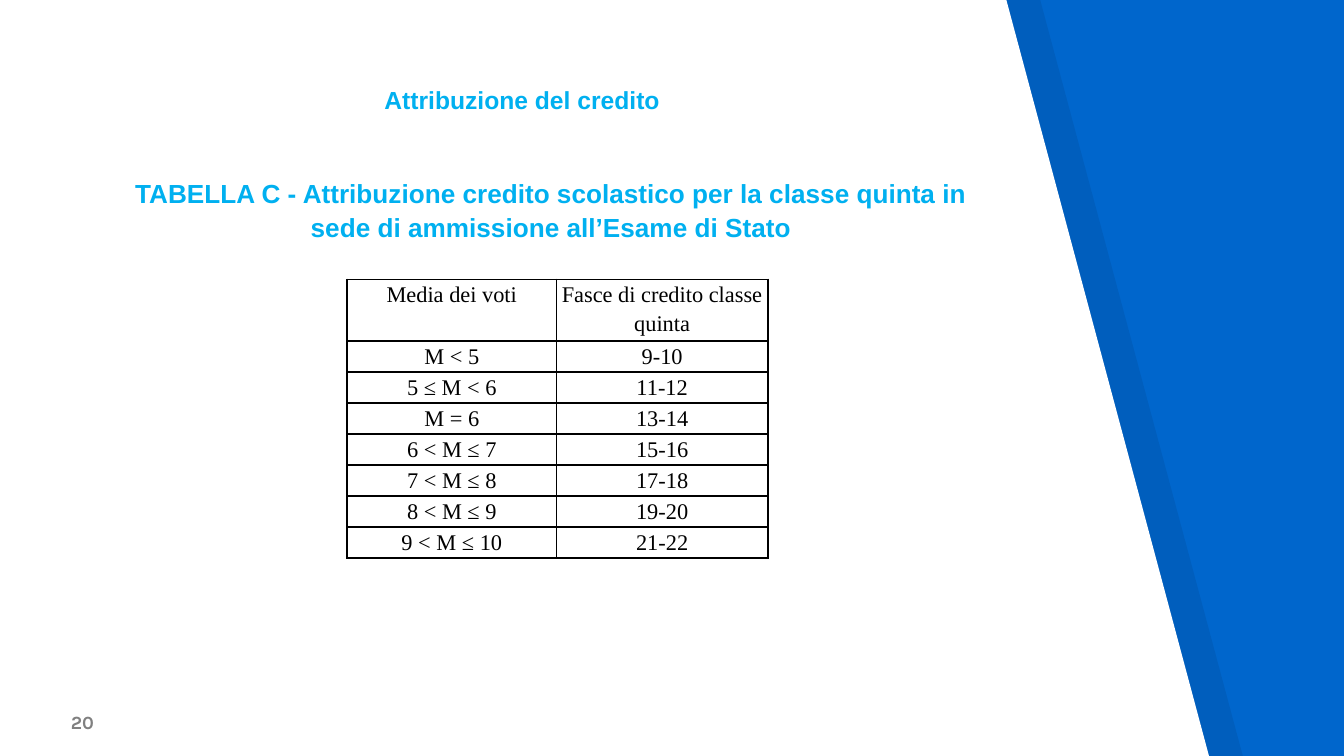
from lxml import etree
from pptx import Presentation
from pptx.dml.color import RGBColor
from pptx.enum.text import MSO_ANCHOR, PP_ALIGN
from pptx.oxml.ns import qn
from pptx.util import Cm, Pt

BLUE = RGBColor(0x00, 0x66, 0xCC)
CYAN = RGBColor(0x00, 0xB0, 0xF0)
GRAY = RGBColor(0x80, 0x80, 0x80)
BLACK = RGBColor(0x00, 0x00, 0x00)
WHITE = RGBColor(0xFF, 0xFF, 0xFF)
CENTER = PP_ALIGN.CENTER
LEFT = PP_ALIGN.LEFT
TOP = MSO_ANCHOR.TOP
BOTTOM = MSO_ANCHOR.BOTTOM

CREDIT_ROWS = [
    ("Media dei voti", "Fasce di credito classe quinta"),
    ("M < 5", "9-10"),
    ("5 ≤ M < 6", "11-12"),
    ("M = 6", "13-14"),
    ("6 < M ≤ 7", "15-16"),
    ("7 < M ≤ 8", "17-18"),
    ("8 < M ≤ 9", "19-20"),
    ("9 < M ≤ 10", "21-22"),
]

presentation = Presentation()
presentation.slide_width = Cm(25.4)
presentation.slide_height = Cm(14.29)
slide = presentation.slides.add_slide(presentation.slide_layouts[6])
slide.background.fill.solid()
slide.background.fill.fore_color.rgb = BLUE

# Slanted white panel over its translucent shadow band
for left, color, alpha in ((0.64, BLACK, 7), (0, WHITE, 100)):
    builder = slide.shapes.build_freeform(Cm(left), Cm(-0.03))
    builder.add_line_segments([
        (Cm(left), Cm(14.33)),
        (Cm(left + 22.86), Cm(14.33)),
        (Cm(left + 19.02), Cm(0)),
    ])
    panel = builder.convert_to_shape()
    panel.shadow.inherit = False
    panel.fill.solid()
    panel.fill.fore_color.rgb = color
    panel.line.fill.background()
    if alpha < 100:
        fill_color = panel.fill._xPr.find(qn("a:solidFill"))[0]
        etree.SubElement(fill_color, qn("a:alpha"), val=str(alpha * 1000))

# Page number, heading and table title
TEXTS = [
    ("20", (1.09, 13.13, 0.94, 0.94), "Karla", 10, GRAY, LEFT, BOTTOM, False),
    ("Attribuzione del credito", (1.37, 1.32, 16.99, 1.73),
     "Arial", 13.2, CYAN, CENTER, TOP, True),
    ("TABELLA C - Attribuzione credito scolastico per la classe quinta in "
     "sede di ammissione all’Esame di Stato", (1.83, 3.07, 17.17, 9.37),
     "Arial", 14, CYAN, CENTER, TOP, True),
]
for text, box, font_name, size, color, alignment, anchor, wrap in TEXTS:
    text_box = slide.shapes.add_textbox(*(Cm(length) for length in box))
    text_frame = text_box.text_frame
    text_frame.word_wrap = wrap
    text_frame.vertical_anchor = anchor
    text_frame.margin_left = text_frame.margin_right = Cm(0.25)
    text_frame.margin_top = text_frame.margin_bottom = Cm(0.25)
    text_frame.text = text
    paragraph = text_frame.paragraphs[0]
    paragraph.alignment = alignment
    if wrap:
        paragraph.line_spacing = 1.07
    font = paragraph.runs[0].font
    font.name = font_name
    font.size = Pt(size)
    font.bold = True
    font.color.rgb = color

# Credit table
ROW_HEIGHT = 0.54
table = slide.shapes.add_table(
    len(CREDIT_ROWS), 2, Cm(6.56), Cm(5.28), Cm(7.95),
    Cm(ROW_HEIGHT * (len(CREDIT_ROWS) + 1))).table
table.first_row = False
table.horz_banding = False
table.columns[0].width = Cm(3.96)
table.columns[1].width = Cm(3.99)
for row_index, values in enumerate(CREDIT_ROWS):
    table.rows[row_index].height = Cm(ROW_HEIGHT * (2 if row_index == 0 else 1))
    for column_index, value in enumerate(values):
        cell = table.cell(row_index, column_index)
        cell.margin_left = cell.margin_right = 0
        cell.margin_top = cell.margin_bottom = 0
        cell.text = value
        paragraph = cell.text_frame.paragraphs[0]
        paragraph.alignment = CENTER
        paragraph.line_spacing = 1.15
        font = paragraph.runs[0].font
        font.name = "Times New Roman"
        font.size = Pt(12)
        font.color.rgb = BLACK
        properties = cell._tc.get_or_add_tcPr()
        for side in ("lnL", "lnR", "lnT", "lnB"):
            border = etree.SubElement(properties, qn(f"a:{side}"), w=str(Pt(1)))
            border_fill = etree.SubElement(border, qn("a:solidFill"))
            etree.SubElement(border_fill, qn("a:srgbClr"), val=str(BLACK))
        cell.fill.background()

presentation.save("out.pptx")
